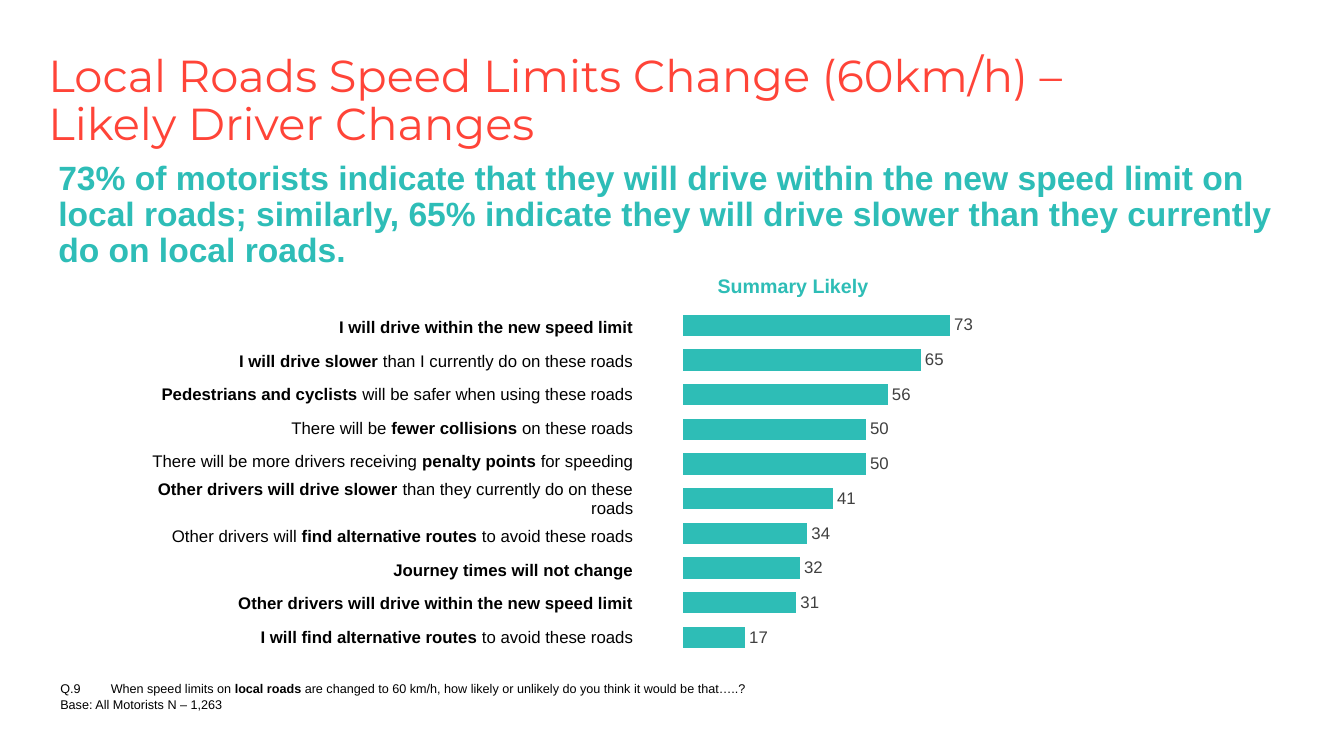
from dataclasses import dataclass

from lxml import etree
from pptx import Presentation
from pptx.chart.data import CategoryChartData
from pptx.dml.color import RGBColor
from pptx.enum.chart import XL_CHART_TYPE, XL_LABEL_POSITION, XL_TICK_LABEL_POSITION, XL_TICK_MARK
from pptx.enum.text import MSO_ANCHOR, PP_ALIGN
from pptx.oxml import parse_xml
from pptx.oxml.ns import nsdecls, qn
from pptx.util import Inches, Pt

BAR = XL_CHART_TYPE.BAR_CLUSTERED
OUTSIDE_END = XL_LABEL_POSITION.OUTSIDE_END
NO_LABELS = XL_TICK_LABEL_POSITION.NONE
NO_TICKS = XL_TICK_MARK.NONE
TOP, MIDDLE, BOTTOM = MSO_ANCHOR.TOP, MSO_ANCHOR.MIDDLE, MSO_ANCHOR.BOTTOM
LEFT, CENTER, RIGHT = PP_ALIGN.LEFT, PP_ALIGN.CENTER, PP_ALIGN.RIGHT


@dataclass(frozen=True)
class Theme:
    coral: str = "FF4438"
    teal: str = "2EBDB7"
    bar: str = "2EBDB6"
    black: str = "000000"
    value_gray: str = "404040"
    title_font: str = "Montserrat"
    body_font: str = "Arial"
    title: int = 32
    message: int = 24
    heading: int = 14
    label: int = 12
    note: int = 9


THEME = Theme()

STATEMENTS = [
    ("**I will drive within the new speed limit**", 73),
    ("**I will drive slower **than I currently do on these roads", 65),
    ("**Pedestrians and cyclists **will be safer when using these roads", 56),
    ("There will be **fewer collisions **on these roads", 50),
    ("There will be more drivers receiving **penalty points **for speeding", 50),
    ("**Other drivers will drive slower** than they currently do on these roads", 41),
    ("Other drivers will **find alternative routes **to avoid these roads", 34),
    ("**Journey times will not change**", 32),
    ("**Other drivers will drive within the new speed limit**", 31),
    ("**I will find alternative routes **to avoid these roads", 17),
]


def style_font(font, size, color, name, bold=False):
    font.size = Pt(size)
    font.name = name
    font.bold = bold
    font.color.rgb = RGBColor.from_string(color)


def write_text(frame, text, size, color=THEME.black, name=THEME.body_font,
               align=LEFT, spacing=None, hanging=0):
    for index, line in enumerate(text.split("\n")):
        paragraph = frame.paragraphs[0] if index == 0 else frame.add_paragraph()
        paragraph.alignment = align
        if spacing:
            paragraph.line_spacing = spacing
        if hanging:
            properties = paragraph._p.get_or_add_pPr()
            properties.set("marL", str(Inches(hanging)))
            properties.set("indent", str(-Inches(hanging)))
        for part, words in enumerate(line.split("**")):
            if words:
                run = paragraph.add_run()
                run.text = words
                style_font(run.font, size, color, name, bold=part % 2 == 1)


class SlideBuilder:
    def __init__(self, presentation, theme):
        self.theme = theme
        self.width = presentation.slide_width
        self.height = presentation.slide_height
        self.slide = presentation.slides.add_slide(presentation.slide_layouts[6])

    def place(self, left, top, width, height):
        return (round(self.width * left / 100), round(self.height * top / 100),
                round(self.width * width / 100), round(self.height * height / 100))

    def text(self, box, text, anchor=TOP, inset=(0.1, 0.05), **style):
        frame = self.slide.shapes.add_textbox(*self.place(*box)).text_frame
        frame.word_wrap = True
        frame.vertical_anchor = anchor
        frame.margin_left = frame.margin_right = Inches(inset[0])
        frame.margin_top = frame.margin_bottom = Inches(inset[1])
        write_text(frame, text, **style)

    def table(self, box, rows, **style):
        left, top, width, height = self.place(*box)
        table = self.slide.shapes.add_table(len(rows), 1, left, top, width, height).table
        table.first_row = table.horz_banding = False
        for row, text in enumerate(rows):
            cell = table.cell(row, 0)
            cell.fill.background()
            cell.vertical_anchor = MIDDLE
            cell.margin_left = cell.margin_right = cell.margin_top = Inches(0.01)
            cell.margin_bottom = 0
            write_text(cell.text_frame, text, **style)

    def bar_chart(self, box, values, plot):
        theme = self.theme
        data = CategoryChartData(number_format="0")
        data.categories = [str(number) for number in range(1, len(values) + 1)]
        data.add_series("Series 1", values)
        chart = self.slide.shapes.add_chart(BAR, *self.place(*box), data).chart
        chart.has_legend = chart.has_title = False
        style_font(chart.font, theme.label, theme.black, theme.body_font)

        chart.category_axis.reverse_order = True
        chart.category_axis.visible = False
        axis = chart.value_axis
        axis.minimum_scale, axis.maximum_scale = 0, 100
        axis.has_major_gridlines = False
        axis.tick_label_position = NO_LABELS
        axis.major_tick_mark = axis.minor_tick_mark = NO_TICKS
        axis.format.line.fill.background()

        bars = chart.plots[0]
        bars.gap_width = 62
        bars.vary_by_categories = False
        bars.series[0].format.fill.solid()
        bars.series[0].format.fill.fore_color.rgb = RGBColor.from_string(theme.bar)
        bars.has_data_labels = True
        labels = bars.data_labels
        labels.show_value = True
        labels.position = OUTSIDE_END
        labels.number_format = "0"
        labels.number_format_is_linked = False
        style_font(labels.font, theme.label, theme.value_gray, theme.body_font)
        self.fix_plot_area(chart, plot)

    def fix_plot_area(self, chart, plot):
        plot_area = chart._chartSpace.chart.plotArea
        for existing in plot_area.findall(qn("c:layout")):
            plot_area.remove(existing)
        layout = parse_xml(f"<c:layout {nsdecls('c')}><c:manualLayout/></c:layout>")
        settings = [("layoutTarget", "inner"), ("xMode", "edge"), ("yMode", "edge")]
        settings += zip("xywh", plot)
        for tag, value in settings:
            etree.SubElement(layout[0], qn(f"c:{tag}")).set("val", str(value))
        plot_area.insert(0, layout)


def main():
    presentation = Presentation()
    presentation.slide_width = Inches(13.33)
    presentation.slide_height = Inches(7.5)
    builder = SlideBuilder(presentation, THEME)

    builder.text((3.6, 5.2, 76.6, 14.67),
                 "Local Roads Speed Limits Change (60km/h) – Likely Driver Changes",
                 anchor=BOTTOM, inset=(0, 0), size=THEME.title, color=THEME.coral,
                 name=THEME.title_font, spacing=0.9)
    builder.text((3.6, 20.67, 92.42, 15.33),
                 "**73% of motorists indicate that they will drive within the new speed limit on "
                 "local roads; similarly, 65% indicate they will drive slower than they currently "
                 "do on local roads.**",
                 size=THEME.message, color=THEME.teal, spacing=0.9)
    builder.text((3.75, 89.47, 71.27, 3.47),
                 "Q.9\tWhen speed limits on **local roads** are changed to 60 km/h, "
                 "how likely or unlikely do you think it would be that…..?\n"
                 "Base: All Motorists N – 1,263",
                 size=THEME.note, hanging=0.5)
    builder.table((50.34, 35.47, 17.33, 4.8), ["**Summary Likely**"],
                  size=THEME.heading, color=THEME.bar, align=CENTER)
    builder.bar_chart((19.05, 37.6, 61.22, 52.13), [value for _, value in STATEMENTS],
                      plot=(0.519, 0.06, 0.445, 0.88))
    builder.table((9.98, 41.07, 37.21, 44.4), [text for text, _ in STATEMENTS],
                  size=THEME.label, align=RIGHT)
    presentation.save("out.pptx")


if __name__ == "__main__":
    main()
